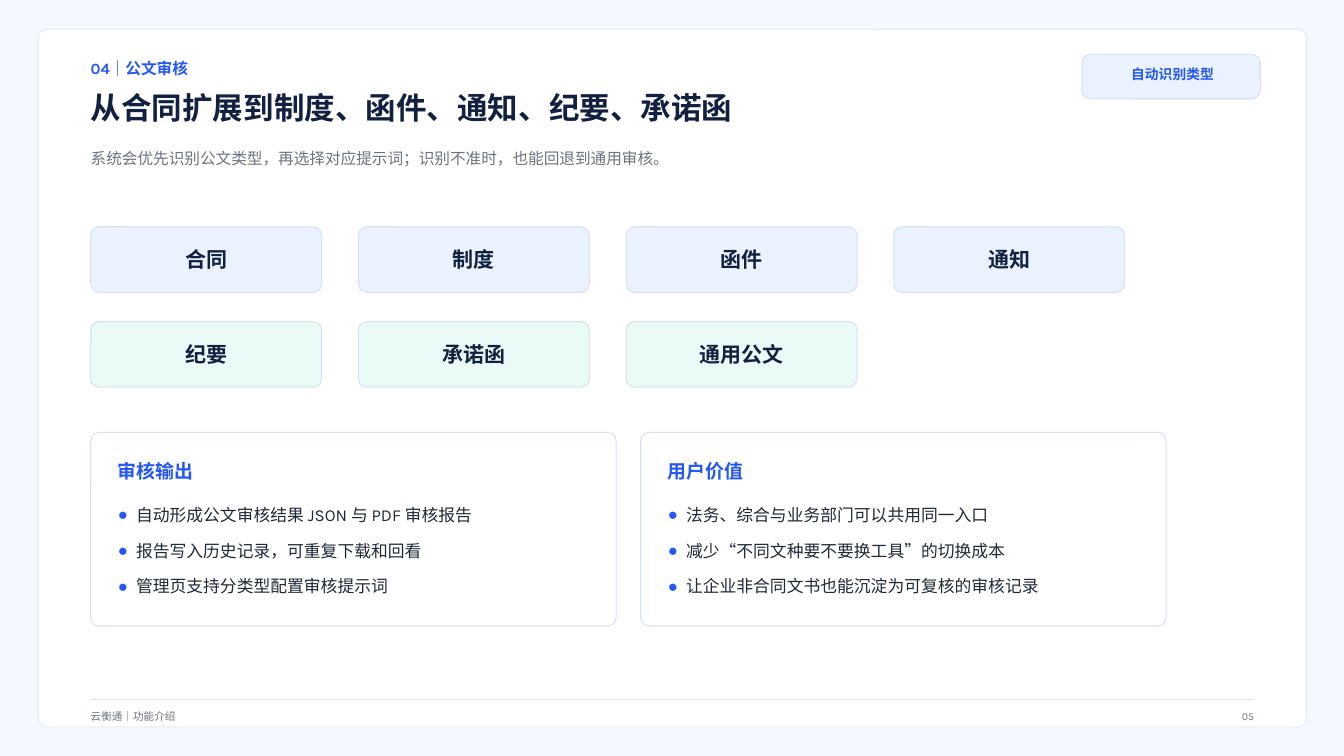
from lxml.etree import SubElement
from pptx import Presentation
from pptx.dml.color import RGBColor
from pptx.enum.shapes import MSO_CONNECTOR, MSO_SHAPE
from pptx.enum.text import MSO_ANCHOR, MSO_AUTO_SIZE, PP_ALIGN
from pptx.oxml.ns import qn
from pptx.util import Inches, Pt

SECTION = "04｜公文审核"
HEADLINE = "从合同扩展到制度、函件、通知、纪要、承诺函"
SUMMARY = "系统会优先识别公文类型，再选择对应提示词；识别不准时，也能回退到通用审核。"
TAG = "自动识别类型"
DOCUMENT_ROWS = [["合同", "制度", "函件", "通知"], ["纪要", "承诺函", "通用公文"]]
PANELS = [
    ("审核输出", ["自动形成公文审核结果 JSON 与 PDF 审核报告",
              "报告写入历史记录，可重复下载和回看",
              "管理页支持分类型配置审核提示词"]),
    ("用户价值", ["法务、综合与业务部门可以共用同一入口",
              "减少“不同文种要不要换工具”的切换成本",
              "让企业非合同文书也能沉淀为可复核的审核记录"]),
]
FOOTER = "云衡通｜功能介绍"
PAGE_NUMBER = "05"

PAGE = RGBColor(0xF5, 0xF8, 0xFE)
WHITE = RGBColor(0xFF, 0xFF, 0xFF)
SHEET_EDGE = RGBColor(0xE5, 0xEC, 0xF7)
EDGE = RGBColor(0xD8, 0xE1, 0xF0)
BLUE = RGBColor(0x24, 0x57, 0xF5)
NAVY = RGBColor(0x12, 0x21, 0x3F)
INK = RGBColor(0x1F, 0x29, 0x37)
GRAY = RGBColor(0x6B, 0x72, 0x80)
PALE_BLUE = RGBColor(0xEA, 0xF2, 0xFF)
PALE_GREEN = RGBColor(0xEA, 0xFB, 0xF7)

STYLES = {
    "section": ({"size": Pt(11.2), "bold": True}, BLUE),
    "headline": ({"size": Pt(21.8), "bold": True}, NAVY),
    "summary": ({"size": Pt(11.2), "bold": False}, GRAY),
    "tag": ({"size": Pt(9.8), "bold": True}, BLUE),
    "document": ({"size": Pt(15), "bold": True}, NAVY),
    "panel": ({"size": Pt(13.5), "bold": True}, BLUE),
    "point": ({"size": Pt(12), "bold": False}, INK),
    "footer": ({"size": Pt(7.5), "bold": False}, GRAY),
}
FRAME_FORMAT = {
    "margin_left": 0, "margin_top": 0, "margin_right": 0, "margin_bottom": 0,
    "word_wrap": True, "auto_size": MSO_AUTO_SIZE.NONE,
}

LEFT = 0.9
RIGHT = 12.44


def write(frame, lines, style, align=PP_ALIGN.LEFT, anchor=MSO_ANCHOR.TOP, bulleted=False):
    """Fill a text frame with styled lines."""
    for key, value in FRAME_FORMAT.items():
        setattr(frame, key, value)
    frame.vertical_anchor = anchor
    values, color = STYLES[style]
    for index, line in enumerate(lines):
        paragraph = frame.paragraphs[0] if index == 0 else frame.add_paragraph()
        paragraph.alignment = align
        if bulleted:
            paragraph.line_spacing = Pt(25.6)
            add_bullet(paragraph)
        run = paragraph.add_run()
        run.text = line
        for key, value in {"name": "Karla", **values}.items():
            setattr(run.font, key, value)
        run.font.color.rgb = color


def add_bullet(paragraph):
    """Give a paragraph a round blue bullet with a hanging indent."""
    properties = paragraph._p.get_or_add_pPr()
    properties.set("marL", str(Inches(0.18)))
    properties.set("indent", str(-Inches(0.18)))
    SubElement(SubElement(properties, qn("a:buClr")), qn("a:srgbClr"), val=str(BLUE))
    SubElement(properties, qn("a:buFont"), typeface="Arial")
    SubElement(properties, qn("a:buChar"), char="●")


def add_text(slide, box, lines, style, **options):
    """Add a text box."""
    write(slide.shapes.add_textbox(*map(Inches, box)).text_frame, lines, style, **options)


def add_card(slide, box, radius, fill, edge=EDGE):
    """Add a rounded card and return it."""
    card = slide.shapes.add_shape(MSO_SHAPE.ROUNDED_RECTANGLE, *map(Inches, box))
    card.adjustments[0] = radius
    card.shadow.inherit = False
    card.fill.solid()
    card.fill.fore_color.rgb = fill
    card.line.color.rgb = edge
    card.line.width = Pt(0.75)
    return card


def add_header(slide):
    """Add the section, headline, summary and tag."""
    add_text(slide, (LEFT, 0.58, 2.5, 0.25), [SECTION], "section")
    title = slide.shapes.title
    title.element.getparent().append(title.element)
    title.left, title.top, title.width, title.height = map(Inches, (LEFT, 0.88, 8.96, 0.67))
    write(title.text_frame, [HEADLINE], "headline")
    add_text(slide, (LEFT, 1.48, 9.38, 0.46), [SUMMARY], "summary")
    tag = add_card(slide, (10.73, 0.54, 1.77, 0.44), 0.19, PALE_BLUE)
    write(tag.text_frame, [TAG], "tag", align=PP_ALIGN.CENTER)
    tag.text_frame.margin_top = Inches(0.09)
    tag.text_frame.margin_left = Inches(0.03)


def add_documents(slide):
    """Add the grid of document types."""
    for row, (names, fill) in enumerate(zip(DOCUMENT_ROWS, (PALE_BLUE, PALE_GREEN))):
        for column, name in enumerate(names):
            box = (LEFT + column * 2.655, 2.25 + row * 0.94, 2.29, 0.65)
            card = add_card(slide, box, 0.129, fill)
            write(card.text_frame, [name], "document",
                  align=PP_ALIGN.CENTER, anchor=MSO_ANCHOR.MIDDLE)


def add_panels(slide):
    """Add the two panels with their bullet lists."""
    for column, (heading, points) in enumerate(PANELS):
        left = LEFT + column * 5.455
        add_card(slide, (left, 4.29, 5.21, 1.92), 0.043, WHITE)
        add_text(slide, (left + 0.27, 4.56, 1.25, 0.25), [heading], "panel")
        add_text(slide, (left + 0.27, 4.85, 4.37, 1.1), points, "point", bulleted=True)


def add_footer(slide):
    """Add the rule, footer label and page number."""
    rule = slide.shapes.add_connector(
        MSO_CONNECTOR.STRAIGHT, *map(Inches, (LEFT, 6.94, RIGHT, 6.94)))
    rule.line.color.rgb = EDGE
    rule.line.width = Pt(0.75)
    SubElement(rule.element.spPr, qn("a:effectLst"))
    add_text(slide, (LEFT, 7.04, 3.12, 0.17), [FOOTER], "footer")
    add_text(slide, (RIGHT - 2.23, 7.04, 2.23, 0.17), [PAGE_NUMBER], "footer",
             align=PP_ALIGN.RIGHT)


def main():
    """Build and save the slide."""
    deck = Presentation()
    deck.slide_width, deck.slide_height = Inches(13.33), Inches(7.5)
    slide = deck.slides.add_slide(deck.slide_layouts[5])
    slide.background.fill.solid()
    slide.background.fill.fore_color.rgb = PAGE
    add_card(slide, (0.38, 0.29, 12.58, 6.92), 0.012, WHITE, SHEET_EDGE)
    add_header(slide)
    add_documents(slide)
    add_panels(slide)
    add_footer(slide)
    deck.save("out.pptx")


if __name__ == "__main__":
    main()
